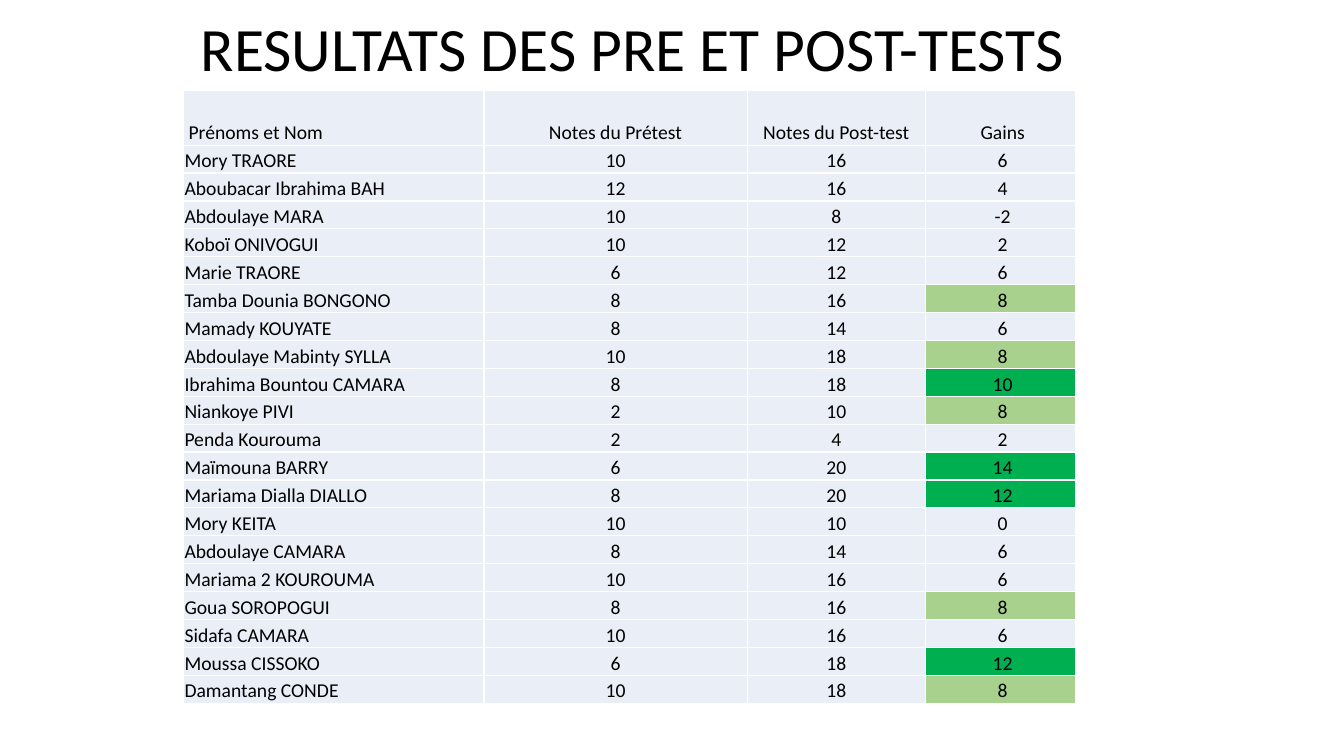
from lxml import etree
from pptx import Presentation
from pptx.dml.color import RGBColor
from pptx.enum.text import MSO_ANCHOR, PP_ALIGN
from pptx.oxml.ns import qn
from pptx.util import Inches, Pt

BLACK = RGBColor(0x00, 0x00, 0x00)
WHITE = RGBColor(0xFF, 0xFF, 0xFF)
PALE_BLUE = RGBColor(0xEA, 0xEF, 0xF7)
LIGHT_GREEN = RGBColor(0xA9, 0xD1, 0x8E)
GREEN = RGBColor(0x00, 0xB0, 0x50)

LEFT, CENTER = PP_ALIGN.LEFT, PP_ALIGN.CENTER
MIDDLE, BOTTOM = MSO_ANCHOR.MIDDLE, MSO_ANCHOR.BOTTOM

HEADINGS = ["Prénoms et Nom", "Notes du Prétest", "Notes du Post-test", "Gains"]
COLUMN_WIDTHS = [2.98, 2.61, 1.77, 1.49]
TABLE_HEIGHT = 6.08
HEADING_HEIGHT = 0.54

# Name, pre-test mark, post-test mark
MARKS = [
    ("Mory TRAORE", 10, 16),
    ("Aboubacar Ibrahima BAH", 12, 16),
    ("Abdoulaye MARA", 10, 8),
    ("Koboï ONIVOGUI", 10, 12),
    ("Marie TRAORE", 6, 12),
    ("Tamba Dounia BONGONO", 8, 16),
    ("Mamady KOUYATE", 8, 14),
    ("Abdoulaye Mabinty SYLLA", 10, 18),
    ("Ibrahima Bountou CAMARA", 8, 18),
    ("Niankoye PIVI", 2, 10),
    ("Penda Kourouma", 2, 4),
    ("Maïmouna BARRY", 6, 20),
    ("Mariama Dialla DIALLO", 8, 20),
    ("Mory KEITA", 10, 10),
    ("Abdoulaye CAMARA", 8, 14),
    ("Mariama 2 KOUROUMA", 10, 16),
    ("Goua SOROPOGUI", 8, 16),
    ("Sidafa CAMARA", 10, 16),
    ("Moussa CISSOKO", 6, 18),
    ("Damantang CONDE", 10, 18),
]


def gain_color(gain):
    if gain >= 10:
        return GREEN
    return LIGHT_GREEN if gain >= 8 else PALE_BLUE


class SlideBuilder:
    font_name = "Calibri"
    text_color = BLACK

    def __init__(self, slide):
        self.slide = slide

    def format_text(self, paragraph, size, alignment):
        paragraph.alignment = alignment
        for run in paragraph.runs:
            run.font.name = self.font_name
            run.font.size = Pt(size)
            run.font.bold = False
            run.font.color.rgb = self.text_color

    def title(self, text, left, top, width, height, indent):
        text_frame = self.slide.shapes.add_textbox(
            Inches(left), Inches(top), Inches(width), Inches(height)).text_frame
        text_frame.word_wrap = True
        text_frame.vertical_anchor = MIDDLE
        text_frame.margin_left = Inches(indent)
        text_frame.text = text
        paragraph = text_frame.paragraphs[0]
        paragraph.line_spacing = 0.9
        self.format_text(paragraph, 44, LEFT)

    def table(self, row_count, left, top, column_widths, height, heading_height):
        table = self.slide.shapes.add_table(
            row_count, len(column_widths), Inches(left), Inches(top),
            Inches(sum(column_widths)), Inches(height)).table
        table.first_row = False
        table.horz_banding = False
        for column, width in zip(table.columns, column_widths):
            column.width = Inches(width)
        row_height = (height - heading_height) / (row_count - 1)
        for index, row in enumerate(table.rows):
            row.height = Inches(row_height if index else heading_height)
        return table

    def cell(self, cell, text, alignment, fill, margin_left=0.01):
        self.borders(cell)
        cell.fill.solid()
        cell.fill.fore_color.rgb = fill
        cell.vertical_anchor = BOTTOM
        cell.margin_left = Inches(margin_left)
        cell.margin_top = cell.margin_right = Inches(0.01)
        cell.margin_bottom = 0
        cell.text_frame.text = text
        self.format_text(cell.text_frame.paragraphs[0], 14, alignment)

    def borders(self, cell):
        properties = cell._tc.get_or_add_tcPr()
        for side in ("a:lnL", "a:lnR", "a:lnT", "a:lnB"):
            line = etree.SubElement(properties, qn(side), w=str(Pt(1)))
            fill = etree.SubElement(line, qn("a:solidFill"))
            etree.SubElement(fill, qn("a:srgbClr"), val=str(WHITE))


def main():
    presentation = Presentation()
    presentation.slide_width = Inches(13.33)
    presentation.slide_height = Inches(7.5)
    slide = presentation.slides.add_slide(presentation.slide_layouts[6])
    builder = SlideBuilder(slide)

    # Title
    builder.title("RESULTATS DES PRE ET POST-TESTS", 0.92, 0.13, 11.5, 0.77, 1.07)

    # Table of marks, with the gain worked out and coloured by size
    rows = [(HEADINGS, PALE_BLUE)]
    for name, before, after in MARKS:
        gain = after - before
        rows.append(([name, str(before), str(after), str(gain)], gain_color(gain)))

    table = builder.table(len(rows), 1.82, 0.9, COLUMN_WIDTHS,
                          TABLE_HEIGHT, HEADING_HEIGHT)
    last_column = len(HEADINGS) - 1
    for row_index, (texts, last_fill) in enumerate(rows):
        for column_index, text in enumerate(texts):
            is_gain = column_index == last_column
            is_name_heading = row_index == 0 and column_index == 0
            builder.cell(
                table.cell(row_index, column_index), text,
                CENTER if column_index else LEFT,
                last_fill if is_gain else PALE_BLUE,
                0.05 if is_gain or is_name_heading else 0.01)

    presentation.save("out.pptx")


if __name__ == "__main__":
    main()
